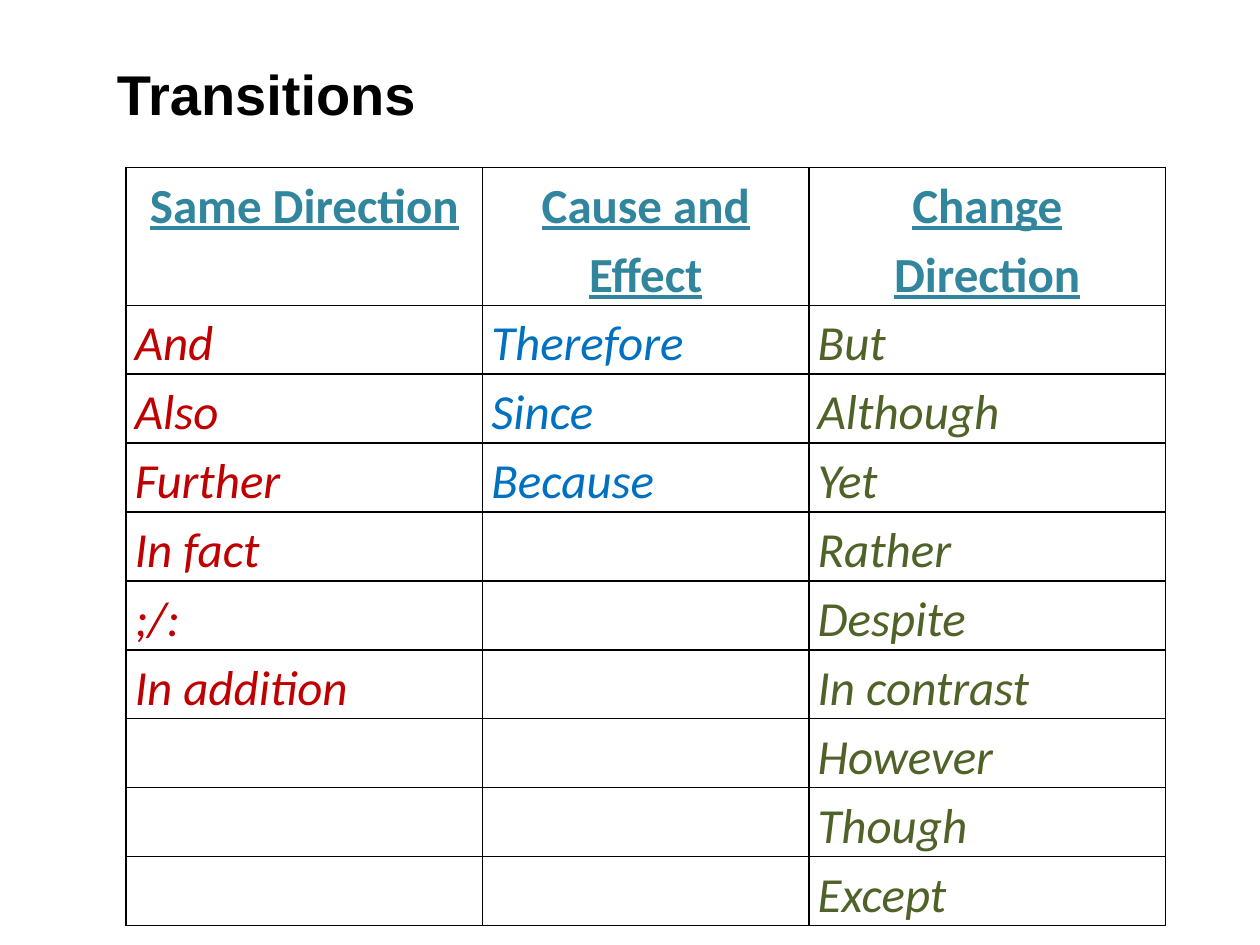
from lxml import etree
from pptx import Presentation
from pptx.dml.color import RGBColor
from pptx.enum import text
from pptx.oxml.ns import qn
from pptx.util import Inches, Pt

TEAL = RGBColor(0x31, 0x85, 0x9C)
RED = RGBColor(0xC0, 0x00, 0x00)
BLUE = RGBColor(0x00, 0x70, 0xC0)
GREEN = RGBColor(0x4F, 0x62, 0x28)
BLACK = RGBColor(0, 0, 0)

TITLE = "Transitions"
# Heading, width, word colour, words
COLUMNS = [
    ("Same Direction", 2.83, RED,
     ["And", "Also", "Further", "In fact", ";/:", "In addition"]),
    ("Cause and Effect", 2.59, BLUE, ["Therefore", "Since", "Because"]),
    ("Change Direction", 2.83, GREEN,
     ["But", "Although", "Yet", "Rather", "Despite", "In contrast",
      "However", "Though", "Except"]),
]
HEIGHTS = [1.04, 0.45, 0.39, 0.42, 0.39, 0.42, 0.45, 0.39, 0.39, 0.39]


def frame_cell(cell):
    """Clear the fill and draw a thin black line on all four sides."""
    props = cell._tc.get_or_add_tcPr()
    for side in ("lnL", "lnR", "lnT", "lnB"):
        line = etree.SubElement(props, qn("a:" + side), w=str(Pt(1)))
        fill = etree.SubElement(line, qn("a:solidFill"))
        etree.SubElement(fill, qn("a:srgbClr"), val=str(BLACK))
    cell.fill.background()
    cell.margin_left = cell.margin_right = Inches(0.07)
    cell.margin_top = cell.margin_bottom = 0


def write(cell, words, color, head):
    para = cell.text_frame.paragraphs[0]
    para.text = words
    para.line_spacing = 1.15
    para.space_after = Pt(10)
    para.alignment = text.PP_ALIGN.CENTER if head else text.PP_ALIGN.LEFT
    font = para.font
    font.name, font.size = "Calibri", Pt(28)
    font.bold = font.underline = head
    font.italic = not head
    font.color.rgb = color


def add_grid(slide):
    frame = slide.shapes.add_table(
        len(HEIGHTS), len(COLUMNS),
        Inches(1), Inches(1.33), Inches(8.25), Inches(5.9))
    table = frame.table
    table.first_row = table.horz_banding = False
    for row, height in zip(table.rows, HEIGHTS):
        row.height = Inches(height)
    for cell in table.iter_cells():
        frame_cell(cell)
    for col, (head, width, color, words) in enumerate(COLUMNS):
        table.columns[col].width = Inches(width)
        write(table.cell(0, col), head, TEAL, True)
        for row, word in enumerate(words, 1):
            write(table.cell(row, col), word, color, False)
    frame.height = Inches(5.9)


def add_title(slide):
    box = slide.shapes.add_textbox(
        Inches(0.83), Inches(0.42), Inches(3.58), Inches(0.64))
    frame = box.text_frame
    frame.word_wrap = True
    frame.auto_size = text.MSO_AUTO_SIZE.SHAPE_TO_FIT_TEXT
    para = frame.paragraphs[0]
    para.text = TITLE
    font = para.font
    font.name, font.size, font.bold = "Arial", Pt(32), True
    font.color.rgb = BLACK


def main():
    deck = Presentation()
    deck.slide_width, deck.slide_height = Inches(10), Inches(7.5)
    slide = deck.slides.add_slide(deck.slide_layouts[6])
    add_grid(slide)
    add_title(slide)
    deck.save("out.pptx")


if __name__ == "__main__":
    main()
